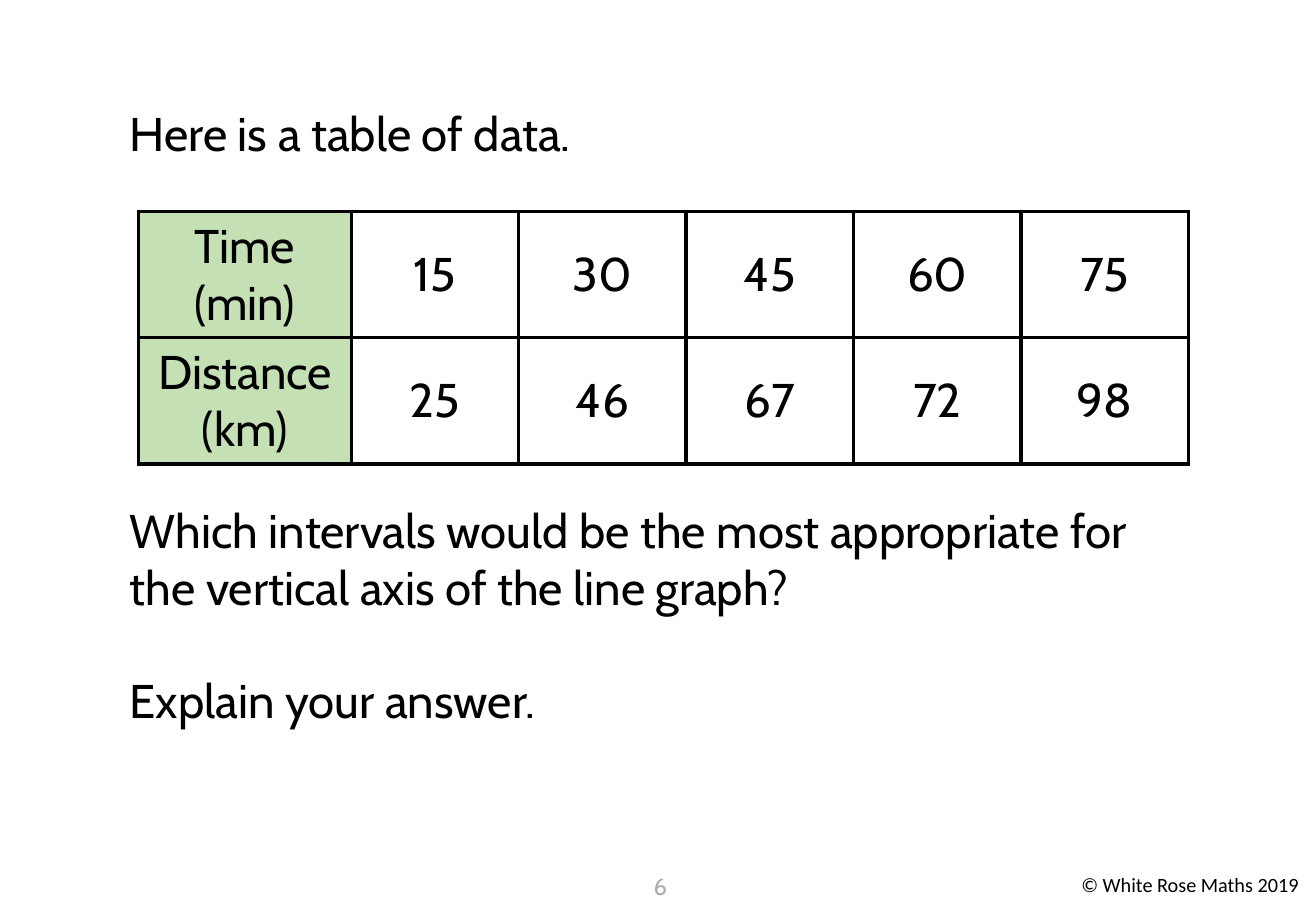
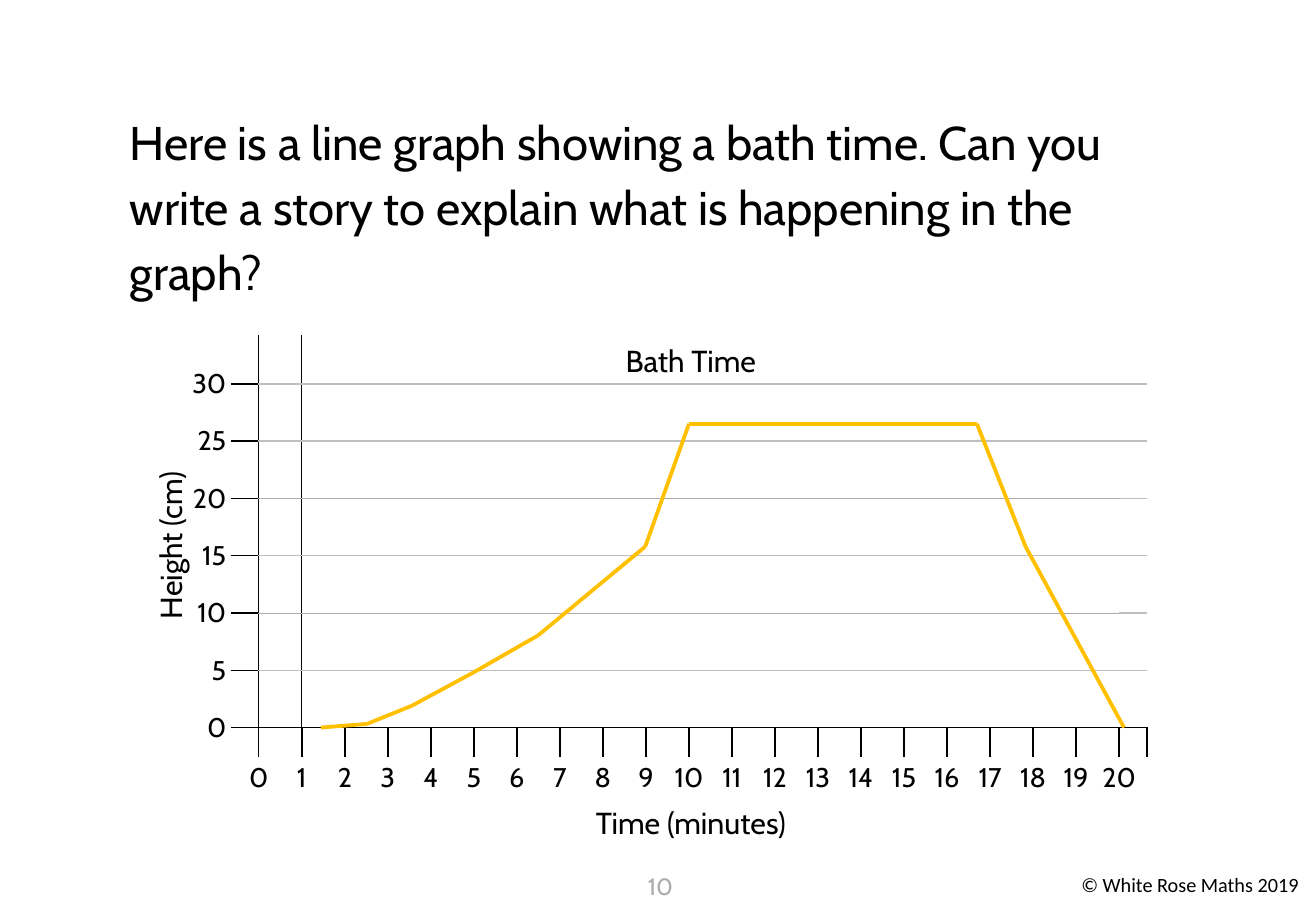
"""Build two maths slides: a table question and a bath time line graph."""
from dataclasses import dataclass
from itertools import pairwise
from typing import Optional

from lxml.etree import SubElement
from pptx import Presentation
from pptx.dml.color import RGBColor
from pptx.enum.shapes import MSO_CONNECTOR
from pptx.enum.text import MSO_ANCHOR, PP_ALIGN as Align
from pptx.oxml.ns import qn
from pptx.slide import Slide
from pptx.table import Table, _Cell as Cell
from pptx.util import Inches, Pt

BLACK = RGBColor(0x00, 0x00, 0x00)
WHITE = RGBColor(0xFF, 0xFF, 0xFF)
GREEN = RGBColor(0xC5, 0xE0, 0xB4)
GOLD = RGBColor(0xFF, 0xC0, 0x00)
LIGHT_GREY = RGBColor(0xBF, 0xBF, 0xBF)
GREY = RGBColor(0xAF, 0xAB, 0xAB)

BODY_SIZE = 28
BLANK_LINE = 33.6
PLAIN_TABLE_STYLE = "{2D5ABB26-0587-4C30-8999-92F81FD0307C}"

DATA = [
    ("Time (min)", "15", "30", "45", "60", "75"),
    ("Distance (km)", "25", "46", "67", "72", "98"),
]

GRID_LEFT, GRID_TOP = 1.9, 2.76
MARGIN = 0.23
MINUTES = 20
MINUTE_WIDTH = (7.77 - 3 * MARGIN) / MINUTES
HEADROOM, TICK_HEIGHT = 0.4, 0.24
STEPS = 6
STEP_HEIGHT = (3.47 - HEADROOM - TICK_HEIGHT) / STEPS
GRID_COLUMNS = [MARGIN] + [MINUTE_WIDTH] * MINUTES + [MARGIN] * 2
GRID_ROWS = [HEADROOM] + [STEP_HEIGHT] * STEPS + [TICK_HEIGHT]
AXIS_ROW = STEPS + 1
WATER_HEIGHT = [
    (2.64, 5.99), (3.02, 5.96), (3.39, 5.81), (3.89, 5.54), (4.43, 5.23),
    (5.31, 4.5), (5.67, 3.49), (8.04, 3.49), (8.44, 4.5), (9.25, 5.99),
]


@dataclass(frozen=True)
class Para:
    text: str
    before: float = 0
    spacing: Optional[float] = None


@dataclass(frozen=True)
class Label:
    text: str
    left: float
    top: float
    width: float
    height: float
    size: float
    align: Align = Align.CENTER
    color: RGBColor = BLACK
    font: str = "Cabin"
    rotation: float = 0


@dataclass(frozen=True)
class Border:
    color: RGBColor
    width: float


def style(p, size: float, color: RGBColor = BLACK, font: str = "Cabin") -> None:
    p.font.size = Pt(size)
    p.font.name = font
    p.font.color.rgb = color


def add_label(slide: Slide, label: Label) -> None:
    sp = slide.shapes.add_textbox(Inches(label.left), Inches(label.top),
                                  Inches(label.width), Inches(label.height))
    sp.rotation = label.rotation
    tf = sp.text_frame
    tf.word_wrap = True
    p = tf.paragraphs[0]
    p.text = label.text
    p.alignment = label.align
    style(p, label.size, label.color, label.font)


def add_body(slide: Slide, paras: list[Para], height: float) -> None:
    sp = slide.shapes.add_textbox(Inches(0.97), Inches(0.81), Inches(8.81), Inches(height))
    tf = sp.text_frame
    tf.word_wrap = True
    for i, para in enumerate(paras):
        p = tf.add_paragraph() if i else tf.paragraphs[0]
        p.text = para.text
        if para.before:
            p.space_before = Pt(para.before)
        if para.spacing:
            p.line_spacing = para.spacing
        style(p, BODY_SIZE)


def new_slide(prs, number: int) -> Slide:
    s = prs.slides.add_slide(prs.slide_layouts[6])
    add_label(s, Label("© White Rose Maths 2019", 8.8, 7.13, 2.71, 0.3, 12,
                       Align.LEFT, font="Calibri"))
    add_label(s, Label(str(number), 5.18, 7.13, 0.51, 0.4, 14, color=GREY))
    return s


def add_plain_table(slide: Slide, left: float, top: float,
                    widths: list[float], heights: list[float]) -> Table:
    table = slide.shapes.add_table(len(heights), len(widths), Inches(left), Inches(top),
                                   Inches(sum(widths)), Inches(sum(heights))).table
    table.first_row = table.horz_banding = False
    table._tbl.tblPr.find(qn("a:tableStyleId")).text = PLAIN_TABLE_STYLE
    for column, width in zip(table.columns, widths):
        column.width = Inches(width)
    for row, height in zip(table.rows, heights):
        row.height = Inches(height)
    return table


def set_borders(cell: Cell, left: Optional[Border], right: Optional[Border],
                top: Optional[Border], bottom: Optional[Border]) -> None:
    tc_pr = cell._tc.get_or_add_tcPr()
    sides = {"a:lnL": left, "a:lnR": right, "a:lnT": top, "a:lnB": bottom}
    drawn = [(tag, border) for tag, border in sides.items() if border]
    for i, (tag, border) in enumerate(drawn):
        ln = SubElement(tc_pr, qn(tag), w=str(Pt(border.width)))
        fill = SubElement(ln, qn("a:solidFill"))
        SubElement(fill, qn("a:srgbClr"), val=str(border.color))
        tc_pr.insert(i, ln)


def add_data_table(slide: Slide) -> None:
    first_width = 1.75
    value_width = (8.64 - first_width) / 5
    table = add_plain_table(slide, 1.14, 1.74, [first_width] + [value_width] * 5, [1.04] * 2)
    border = Border(BLACK, 2.25)
    for r, row in enumerate(DATA):
        for c, text in enumerate(row):
            cell = table.cell(r, c)
            cell.fill.solid()
            cell.fill.fore_color.rgb = WHITE if c else GREEN
            cell.vertical_anchor = MSO_ANCHOR.MIDDLE
            p = cell.text_frame.paragraphs[0]
            p.text = text
            p.alignment = Align.CENTER
            style(p, BODY_SIZE)
            set_borders(cell, border, border, border, border)


def horizontal_border(edge: int, column: int) -> Optional[Border]:
    if edge in (0, len(GRID_ROWS)) or column == len(GRID_COLUMNS) - 1:
        return None
    if edge == AXIS_ROW:
        return Border(BLACK, 0.5)
    if column == 0:
        return Border(BLACK, 1)
    if edge in (3, 5) and column <= MINUTES:
        return Border(GREY, 0.5)
    return Border(LIGHT_GREY, 1)


def vertical_border(edge: int, row: int) -> Optional[Border]:
    if edge == 1:
        return Border(BLACK, 0.5)
    if row == AXIS_ROW and 1 < edge <= MINUTES + 1:
        return Border(BLACK, 1)
    return None


def add_graph_grid(slide: Slide) -> None:
    table = add_plain_table(slide, GRID_LEFT, GRID_TOP, GRID_COLUMNS, GRID_ROWS)
    for r in range(len(GRID_ROWS)):
        for c in range(len(GRID_COLUMNS)):
            cell = table.cell(r, c)
            cell.margin_left = cell.margin_right = cell.margin_top = cell.margin_bottom = 0
            p = cell.text_frame.paragraphs[0]
            SubElement(p._p, qn("a:endParaRPr"), sz="800")
            cell.fill.background()
            set_borders(cell, vertical_border(c, r), vertical_border(c + 1, r),
                        horizontal_border(r, c), horizontal_border(r + 1, c))


def add_segment(slide: Slide, start: tuple[float, float], end: tuple[float, float]) -> None:
    line = slide.shapes.add_connector(MSO_CONNECTOR.STRAIGHT,
                                      *(Inches(v) for v in (*start, *end)))
    line.line.color.rgb = GOLD
    line.line.width = Pt(2.25)
    SubElement(line._element.spPr, qn("a:effectLst"))


def add_graph(slide: Slide) -> None:
    add_graph_grid(slide)
    for i in range(STEPS + 1):
        add_label(slide, Label(str(5 * i), 1.19, 5.8 - i * STEP_HEIGHT, 0.77, 0.37, 16,
                               Align.RIGHT))
    label_width = 0.6
    first_left = GRID_LEFT + MARGIN - label_width / 2
    for minute in range(MINUTES + 1):
        add_label(slide, Label(str(minute), first_left + minute * MINUTE_WIDTH, 6.21,
                               label_width, 0.37, 16))
    for start, end in pairwise(WATER_HEIGHT):
        add_segment(slide, start, end)
    add_label(slide, Label("Bath Time", 2.12, 2.77, 7.13, 0.4, 18))
    add_label(slide, Label("Time (minutes)", 2.12, 6.57, 7.13, 0.4, 18))
    add_label(slide, Label("Height (cm)", 0.6, 4.29, 1.6, 0.4, 18, rotation=270))


def main() -> None:
    prs = Presentation()
    prs.slide_width, prs.slide_height = Inches(10.83), Inches(7.5)

    s = new_slide(prs, 6)
    add_body(s, [
        Para("Here is a table of data."),
        Para("Which intervals would be the most appropriate for the vertical axis "
             "of the line graph?", before=6 * BLANK_LINE),
        Para("Explain your answer.", before=BLANK_LINE),
    ], 5.28)
    add_data_table(s)

    s = new_slide(prs, 10)
    add_body(s, [
        Para("Here is a line graph showing a bath time. Can you write a story to explain "
             "what is happening in the graph?", spacing=1.15),
    ], 1.8)
    add_graph(s)

    prs.save("out.pptx")


if __name__ == "__main__":
    main()
